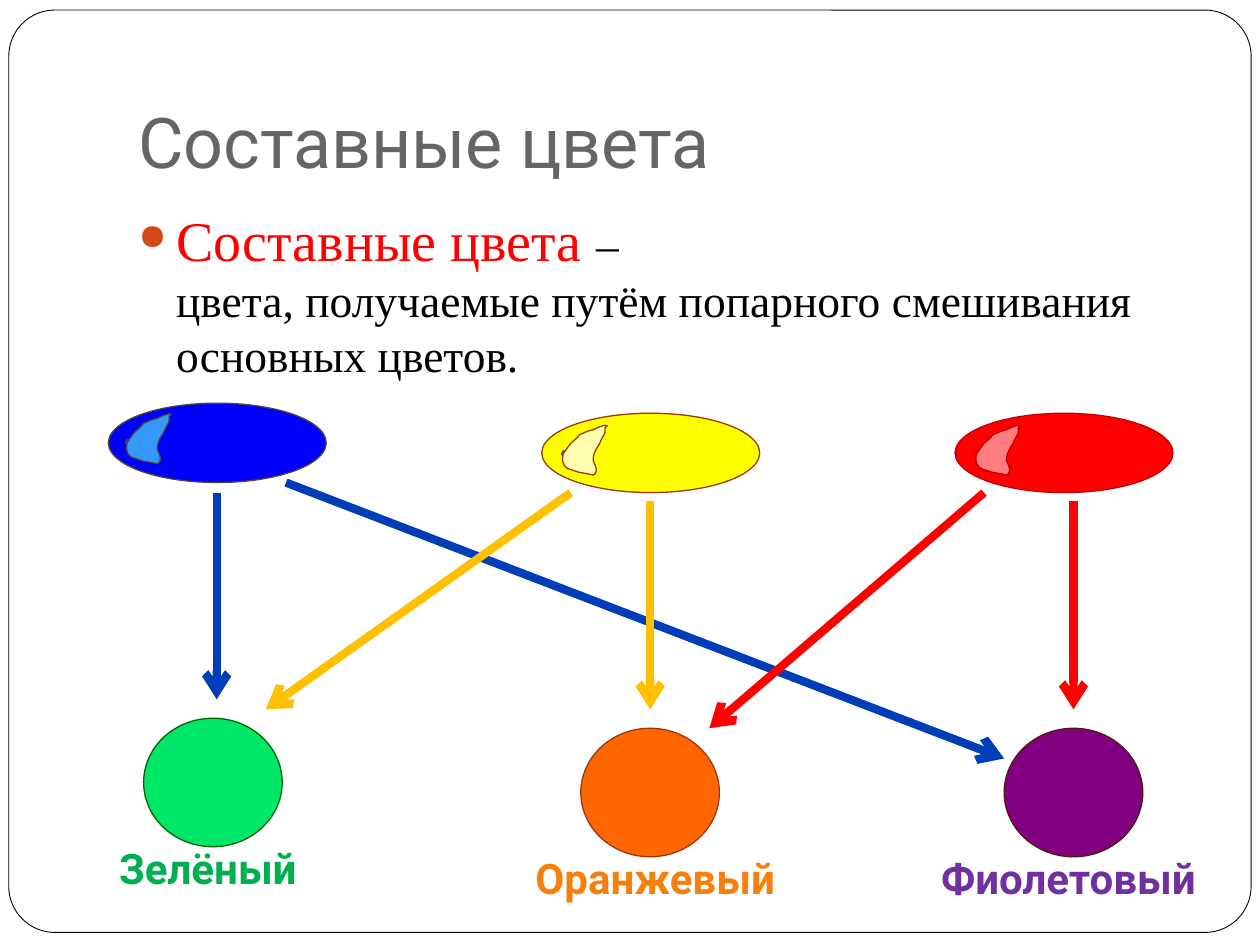
from lxml import etree
from pptx import Presentation
from pptx import util as u
from pptx.dml import color
from pptx.enum import shapes, text
from pptx.oxml import ns

PX = 9144
HUES = {
    "white": "FFFFFF", "black": "000000", "title": "696464", "dot": "D34817",
    "red": "FF0000", "blue": "0000FF", "yellow": "FFFF00",
    "sky": "3399FF", "cream": "FFFFCC", "pink": "FF7C80",
    "brown": "534733", "rust": "9E3611", "wine": "C00000",
    "navy": "003DB8", "gold": "FFC000",
    "green": "00E668", "pine": "006600", "leaf": "00B050",
    "orange": "FF6600", "amber": "F5800B",
    "violet": "800080", "maroon": "4E1710", "plum": "7030A0",
}
SHINE = [
    (39, 12), (34, 13), (31, 15), (28, 16), (26, 19), (23, 21), (21, 23),
    (19, 25), (15, 32), (14, 32), (13, 33), (15, 27), (16, 29),
    (14, 33), (13, 40), (19, 43), (22, 44), (25, 45), (28, 46),
    (30, 46), (39, 48), (39, 48), (41, 47), (42, 44), (41, 42),
    (41, 40), (38, 37), (39, 34), (39, 31), (42, 26), (44, 23),
    (45, 20), (47, 17), (48, 15), (49, 13), (47, 9), (50, 9),
    (49, 7), (41, 11), (39, 12),
]
DYES = [
    ((86, 320, 173, 63), 0, "blue", "sky", "brown", 100),
    ((430, 328, 173, 63), 2, "yellow", "cream", "rust", 86),
    ((758, 328, 173, 63), 2, "red", "pink", "wine", 100),
]
MIXES = [
    ((51, 570, 228, 144), 63, "green", "pine", "Зелёный", "leaf"),
    ((406, 578, 228, 144), 55, "orange", "rust", "Оранжевый", "amber"),
    ((734, 578, 228, 144), 63, "violet", "maroon", "Фиолетовый", "plum"),
]
ARROWS = [
    (852, 398, 852, 563, "red"), (227, 383, 797, 602, "navy"),
    (172, 391, 172, 555, "navy"), (453, 391, 211, 563, "gold"),
    (516, 398, 516, 563, "gold"), (781, 391, 563, 578, "red"),
]


def emu(*vals):
    """Turn px lengths into EMU."""
    return [round(val * PX) for val in vals]


def rgb(name):
    """Look up a colour by name."""
    return color.RGBColor.from_string(HUES[name])


def put(item, vals):
    """Set each format value on an item."""
    for key, val in vals.items():
        setattr(item, key, val)


def node(root, tag, **vals):
    """Add a drawing element under a parent."""
    return etree.SubElement(root, ns.qn(tag), vals)


def paint(shape, fill, line, size=0.75):
    """Fill and outline a shape without a shadow."""
    shape.shadow.inherit = False
    shape.fill.solid()
    shape.fill.fore_color.rgb = rgb(fill)
    shape.line.color.rgb = rgb(line)
    shape.line.width = u.Pt(size)


def write(para, words, hue, **vals):
    """Add a styled run to a paragraph."""
    run = para.add_run()
    run.text = words
    put(run.font, vals)
    run.font.color.rgb = rgb(hue)


def textbox(slide, box, **vals):
    """Add a wrapping text box and return its first paragraph."""
    frame = slide.shapes.add_textbox(*emu(*box)).text_frame
    put(frame, {"word_wrap": True, **vals})
    return frame.paragraphs[0]


def frame(slide, box):
    """Draw the rounded slide border."""
    shape = slide.shapes.add_shape(shapes.MSO_SHAPE.ROUNDED_RECTANGLE, *emu(*box))
    shape.adjustments[0] = 0.05
    paint(shape, "white", "black", 0.5)


def title(slide, box):
    """Write the heading at the foot of its box."""
    para = textbox(slide, box, vertical_anchor=text.MSO_ANCHOR.BOTTOM,
                   margin_bottom=u.Inches(0.1))
    write(para, "Составные цвета", "title", name="Roboto", size=u.Pt(40))


def body(slide, box):
    """Write the bulleted definition."""
    para = textbox(slide, box)
    props = para._p.get_or_add_pPr()
    props.set("marL", str(30 * PX))
    props.set("indent", str(-30 * PX))
    node(node(props, "a:buClr"), "a:srgbClr", val=HUES["dot"])
    node(props, "a:buSzPct", val="64000")
    node(props, "a:buChar", char="●")
    face = {"name": "Times New Roman"}
    write(para, "Составные цвета ", "red", size=u.Pt(32), **face)
    write(para, "– ", "black", size=u.Pt(26), **face)
    para.add_line_break()
    write(para, "цвета, получаемые путём попарного смешивания основных цветов.",
          "black", size=u.Pt(26), **face)


def bend(shape, spots):
    """Turn the straight sides of a freeform into cubic curves."""
    sides = list(shape._element.iter(ns.qn("a:lnTo")))
    for pos, side in enumerate(sides):
        arc = etree.Element(ns.qn("a:cubicBezTo"))
        for x, y in spots[3 * pos + 1:3 * pos + 4]:
            node(arc, "a:pt", x=str(x - shape.left), y=str(y - shape.top))
        side.getparent().replace(side, arc)


def dye(slide, box, shift, fill, gloss, line, alpha):
    """Draw a primary colour oval with its highlight."""
    oval = slide.shapes.add_shape(shapes.MSO_SHAPE.OVAL, *emu(*box))
    paint(oval, fill, line)
    left, top = box[0] + shift, box[1] + shift / 2
    spots = [emu(left + x, top + y) for x, y in SHINE]
    pen = slide.shapes.build_freeform(*spots[0], scale=1)
    pen.add_line_segments(spots[3::3], close=True)
    shine = pen.convert_to_shape()
    bend(shine, spots)
    paint(shine, gloss, line)
    if alpha < 100:
        tint = shine._element.spPr.find(ns.qn("a:solidFill"))[0]
        node(tint, "a:alpha", val=str(alpha * 1000))


def mix(slide, box, inset, fill, line, words, hue):
    """Draw a mixed colour circle with its name below."""
    left, top, wide, high = box
    ball = slide.shapes.add_shape(shapes.MSO_SHAPE.OVAL,
                                  *emu(left + inset, top, 110, 102))
    paint(ball, fill, line)
    para = textbox(slide, (left, top + 94, wide, high - 94))
    para.alignment = text.PP_ALIGN.CENTER
    write(para, words, hue, name="Roboto", size=u.Pt(24), bold=True)


def arrow(slide, x, y, endx, endy, hue):
    """Draw an arrow from a primary colour to a mix."""
    line = slide.shapes.add_connector(shapes.MSO_CONNECTOR.STRAIGHT,
                                      *emu(x, y, endx, endy))
    put(line.line, {"width": u.Pt(4.75)})
    line.line.color.rgb = rgb(hue)
    node(line.line._get_or_add_ln(), "a:tailEnd", type="arrow")
    node(line._element.spPr, "a:effectLst")


def main():
    """Build and save the slide."""
    deck = Presentation()
    put(deck, {"slide_width": u.Inches(10), "slide_height": u.Inches(7.5)})
    slide = deck.slides.add_slide(deck.slide_layouts[6])
    frame(slide, (7, 8, 986, 732))
    title(slide, (100, 30, 850, 125))
    body(slide, (100, 158, 850, 500))
    for item in DYES:
        dye(slide, *item)
    for item in MIXES:
        mix(slide, *item)
    for item in ARROWS:
        arrow(slide, *item)
    deck.save("out.pptx")


if __name__ == "__main__":
    main()
